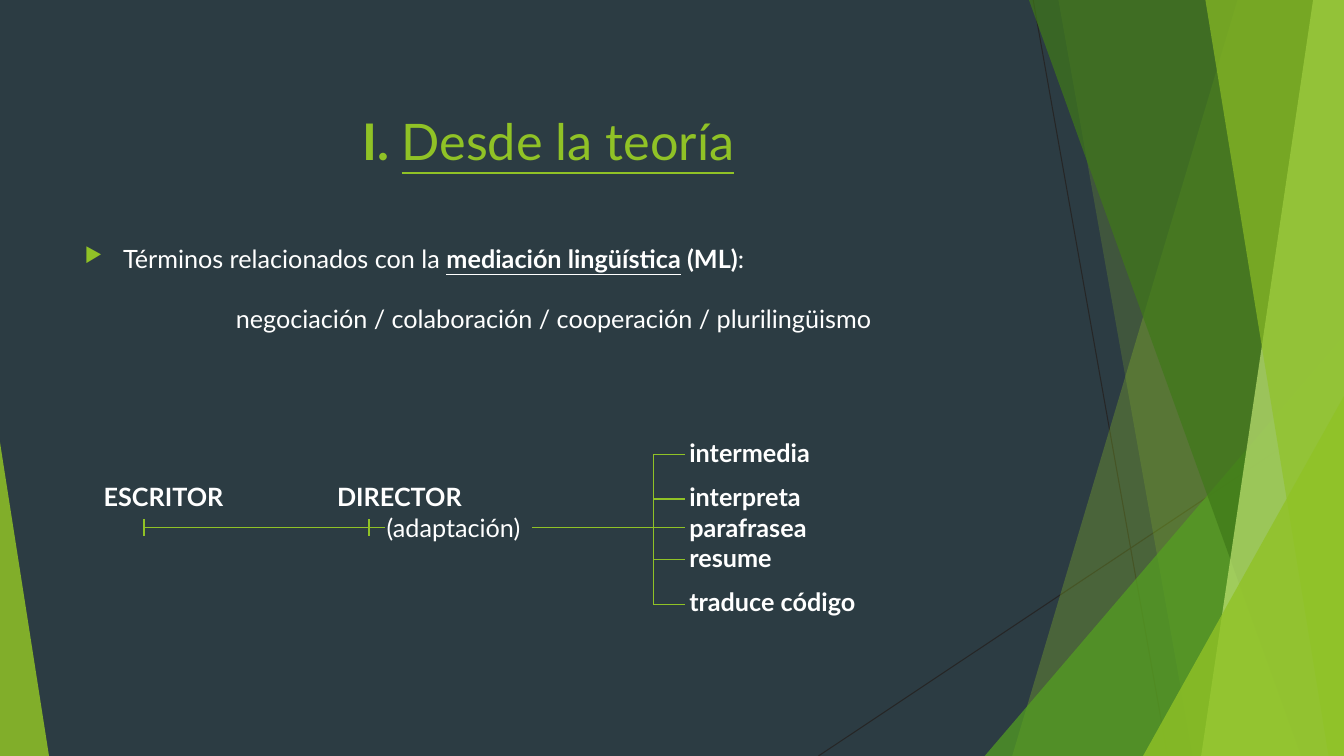
import pptx
import pptx.dml.color
import pptx.enum.shapes
import pptx.enum.text
import pptx.oxml.ns
import pptx.util
from dataclasses import dataclass
from lxml import etree

Pt = pptx.util.Pt
MSO_SHAPE = pptx.enum.shapes.MSO_SHAPE
ALIGN = pptx.enum.text.PP_ALIGN
qn = pptx.oxml.ns.qn


@dataclass(frozen=True)
class Theme:
    font: str = "Lato"
    title_size: int = 36
    body_size: int = 18
    background: str = "2C3C43"
    text: str = "FFFFFF"
    accent: str = "90C226"
    green: str = "54A021"
    dark_green: str = "3F7819"
    pale_green: str = "C0E474"
    hairline: str = "262626"


THEME = Theme()
LINE_HEIGHT = 21.6


def rgb(value):
    return pptx.dml.color.RGBColor.from_string(value)


def add_line(slide, start, end, color=THEME.accent, width=1):
    line = slide.shapes.add_connector(
        pptx.enum.shapes.MSO_CONNECTOR.STRAIGHT, *map(Pt, start + end))
    line.line.color.rgb = rgb(color)
    line.line.width = Pt(width)
    etree.SubElement(line._element.spPr, qn("a:effectLst"))


def paint(shape, color, opacity):
    shape.shadow.inherit = False
    shape.line.fill.background()
    shape.fill.solid()
    shape.fill.fore_color.rgb = rgb(color)
    srgb = shape._element.spPr.find(".//" + qn("a:srgbClr"))
    etree.SubElement(srgb, qn("a:alpha"), val=str(opacity * 1000))


def add_bullet(paragraph, indent):
    props = paragraph._p.get_or_add_pPr()
    props.set("marL", str(Pt(indent)))
    props.set("indent", str(-Pt(indent)))
    color = etree.SubElement(props, qn("a:buClr"))
    etree.SubElement(color, qn("a:srgbClr"), val=THEME.accent)
    etree.SubElement(props, qn("a:buSzPct"), val="80000")
    etree.SubElement(props, qn("a:buChar"), char="▶")


def add_text(slide, box, paragraphs, size=THEME.body_size, color=THEME.text,
             align=ALIGN.LEFT, spacing=(0,), indent=0):
    """Each paragraph is a list of (text, bold, underline) runs."""
    frame = slide.shapes.add_textbox(*map(Pt, box)).text_frame
    frame.word_wrap = True
    frame.margin_left = frame.margin_right = 0
    frame.margin_top = frame.margin_bottom = 0
    frame.vertical_anchor = pptx.enum.text.MSO_ANCHOR.MIDDLE
    for i, (runs, before) in enumerate(zip(paragraphs, spacing)):
        paragraph = frame.paragraphs[0] if i == 0 else frame.add_paragraph()
        paragraph.alignment = align
        paragraph.space_before = Pt(before)
        if indent:
            add_bullet(paragraph, indent)
        paragraph.font.name = THEME.font
        paragraph.font.size = Pt(size)
        paragraph.font.color.rgb = rgb(color)
        for text, bold, underline in runs:
            run = paragraph.add_run()
            run.text = text
            run.font.bold = bold
            run.font.underline = underline


def draw_facets(slide, box):
    left, top, width, height = box
    right, bottom = left + width, top + height

    def band(top_x, bottom_x, color, opacity):
        # A slanted left edge, filled out to the right edge of the slide
        builder = slide.shapes.build_freeform(Pt(left + top_x), Pt(top))
        corners = [(right, top), (right, bottom), (left + bottom_x, bottom)]
        builder.add_line_segments([(Pt(x), Pt(y)) for x, y in corners])
        paint(builder.convert_to_shape(), color, opacity)

    def corner(x, w, h, apex, color, opacity):
        triangle = slide.shapes.add_shape(
            MSO_SHAPE.ISOSCELES_TRIANGLE,
            Pt(left + x), Pt(bottom - h), Pt(w), Pt(h))
        triangle.adjustments[0] = apex
        paint(triangle, color, opacity)

    add_line(slide, (left + 738, top), (left + 834, bottom), THEME.hairline, 0.75)
    add_line(slide, (right, top + 290), (left + 584.6, bottom), THEME.hairline, 0.75)
    band(884, 723, THEME.accent, 30)
    band(756, 852, THEME.accent, 20)
    corner(703.4, 256.6, 300.2, 1, THEME.green, 72)
    band(735, 929.5, THEME.dark_green, 70)
    band(938, 858, THEME.pale_green, 70)
    band(861, 949, THEME.accent, 65)
    corner(816.5, 143.5, 257, 1, THEME.accent, 80)
    corner(0, 35, 224, 0, THEME.accent, 85)


def draw_title(slide, box):
    add_text(slide, box,
             [[("I. ", True, False), ("Desde la teoría", False, True)]],
             THEME.title_size, THEME.accent, ALIGN.CENTER)


def draw_terms(slide, box):
    left, top, width, _ = box
    add_text(slide, (left, top, width, LINE_HEIGHT),
             [[("Términos relacionados con la ", False, False),
               ("mediación lingüística", True, True),
               (" (ML)", True, False), (":", False, False)]], indent=27.4)
    add_text(slide, (left + 108, top + 2 * LINE_HEIGHT, width - 108, LINE_HEIGHT),
             [[("negociación / colaboración / cooperación / plurilingüismo",
                False, False)]])


def draw_diagram(slide, box):
    left, top, width, height = box
    axis = top + 64.2

    # Roles
    role_top = top + LINE_HEIGHT + 10
    for name, x, row, bold in [("ESCRITOR", 0, 0, True),
                               ("DIRECTOR", 166.8, 0, True),
                               ("(adaptación)", 202.2, 1, False)]:
        add_text(slide, (left + x, role_top + row * LINE_HEIGHT, 115, LINE_HEIGHT),
                 [[(name, bold, False)]])

    # Verbs
    verbs = ["intermedia", "interpreta", "parafrasea", "resume", "traduce código"]
    add_text(slide, (left + 418.4, top, width - 418.4, height),
             [[(verb, True, False)] for verb in verbs], spacing=(0, 10, 0, 0, 10))

    # Axis with a tick under each role
    branch, tip = left + 392.6, left + 415.6
    add_line(slide, (left + 29, axis), (left + 201, axis))
    add_line(slide, (left + 306.2, axis), (tip, axis))
    for x in (29, 189.5):
        add_line(slide, (left + x, axis - 6), (left + x, axis + 6))

    # Branches to the verbs
    branches = [top + y for y in (12.3, 44, 87.2, 119.6)]
    add_line(slide, (branch, branches[0]), (branch, branches[-1]))
    for y in branches:
        add_line(slide, (branch, y), (tip, y))


def main():
    deck = pptx.Presentation()
    deck.slide_width, deck.slide_height = Pt(960), Pt(540)
    slide = deck.slides.add_slide(deck.slide_layouts[6])
    slide.background.fill.solid()
    slide.background.fill.fore_color.rgb = rgb(THEME.background)

    draw_facets(slide, (0, 0, 960, 540))
    draw_title(slide, (53.3, 48.2, 676.8, 103.7))
    draw_terms(slide, (60.5, 173.6, 662.4, 64.8))
    draw_diagram(slide, (74, 312.4, 600, 128))
    deck.save("out.pptx")


if __name__ == "__main__":
    main()
